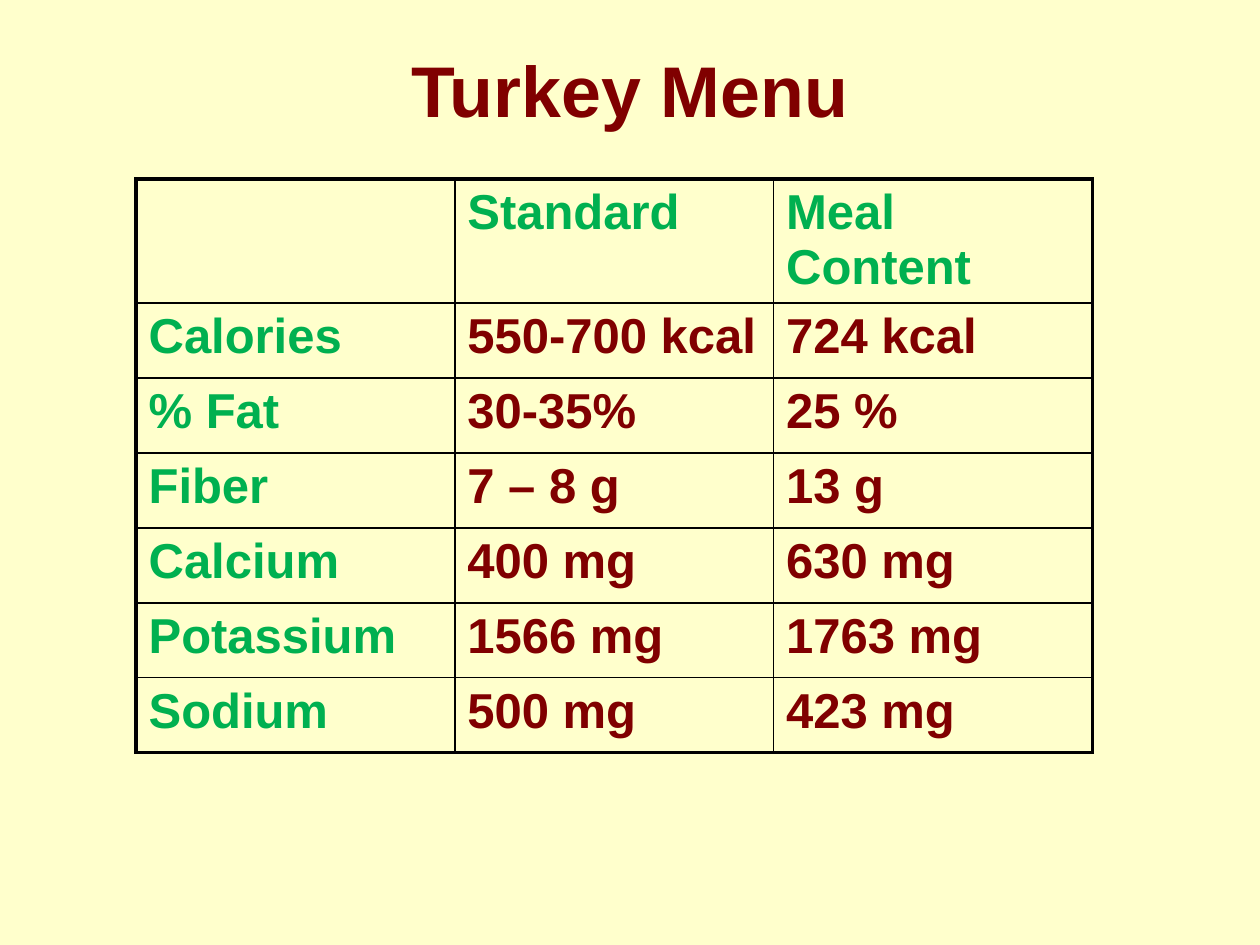
from lxml.etree import SubElement
from pptx import Presentation
from pptx.dml.color import RGBColor
from pptx.enum.text import MSO_ANCHOR, PP_ALIGN
from pptx.oxml.ns import qn
from pptx.util import Inches, Pt

THEME = {
    "font": "Arial",
    "background": RGBColor.from_string("FFFFCC"),
    "value": RGBColor.from_string("800000"),
    "label": RGBColor.from_string("00B050"),
    "border": "000000",
    "title_size": Pt(41),
    "cell_size": Pt(28),
    "outer_line": Pt(2.25),
    "inner_line": Pt(1),
}

MENU = [
    ("", "Standard", "Meal Content"),
    ("Calories", "550-700 kcal", "724 kcal"),
    ("% Fat", "30-35%", "25 %"),
    ("Fiber", "7 – 8 g", "13 g"),
    ("Calcium", "400 mg", "630 mg"),
    ("Potassium", "1566 mg", "1763 mg"),
    ("Sodium", "500 mg", "423 mg"),
]
row_count, column_count = len(MENU), len(MENU[0])
TABLE_HEIGHT = Inches(4.53)
HEADER_HEIGHT = Inches(0.96)
ROW_HEIGHT = (TABLE_HEIGHT - HEADER_HEIGHT) // (row_count - 1)
COLUMN_WIDTH = Inches(2.53)


def style_paragraph(paragraph, size, color):
    font = paragraph.font
    font.name = THEME["font"]
    font.size = size
    font.bold = True
    font.color.rgb = color


def add_border(cell, side, width):
    line = SubElement(cell._tc.get_or_add_tcPr(), qn(f"a:{side}"), w=str(width))
    fill = SubElement(line, qn("a:solidFill"))
    SubElement(fill, qn("a:srgbClr"), val=THEME["border"])


presentation = Presentation()
presentation.slide_width = Inches(10)
presentation.slide_height = Inches(7.5)
slide = presentation.slides.add_slide(presentation.slide_layouts[6])
slide.background.fill.solid()
slide.background.fill.fore_color.rgb = THEME["background"]

# Title
title = slide.shapes.add_textbox(Inches(0.75), Inches(0.08), Inches(8.5), Inches(1.25))
title_frame = title.text_frame
title_frame.word_wrap = True
title_frame.vertical_anchor = MSO_ANCHOR.MIDDLE
title_frame.text = "Turkey Menu"
title_frame.paragraphs[0].alignment = PP_ALIGN.CENTER
style_paragraph(title_frame.paragraphs[0], THEME["title_size"], THEME["value"])

# Nutrition table
table = slide.shapes.add_table(
    row_count, column_count, Inches(1.08), Inches(1.42),
    COLUMN_WIDTH * column_count, TABLE_HEIGHT,
).table
table.first_row = False
table.horz_banding = False
for column in table.columns:
    column.width = COLUMN_WIDTH
for row_index, row in enumerate(table.rows):
    row.height = HEADER_HEIGHT if row_index == 0 else ROW_HEIGHT

for row_index, values in enumerate(MENU):
    for column_index, value in enumerate(values):
        cell = table.cell(row_index, column_index)
        cell.text = value
        if row_index == 0:
            cell.margin_bottom = 0  # keeps the two-line header compact
        is_label = row_index == 0 or column_index == 0
        color = THEME["label"] if is_label else THEME["value"]
        style_paragraph(cell.text_frame.paragraphs[0], THEME["cell_size"], color)

        # Heavy frame outside, thin rules inside; borders precede the fill
        outer_sides = {
            "lnL": column_index == 0,
            "lnR": column_index == column_count - 1,
            "lnT": row_index == 0,
            "lnB": row_index == row_count - 1,
        }
        for side, is_outer in outer_sides.items():
            add_border(cell, side, THEME["outer_line" if is_outer else "inner_line"])
        cell.fill.background()

presentation.save("out.pptx")
